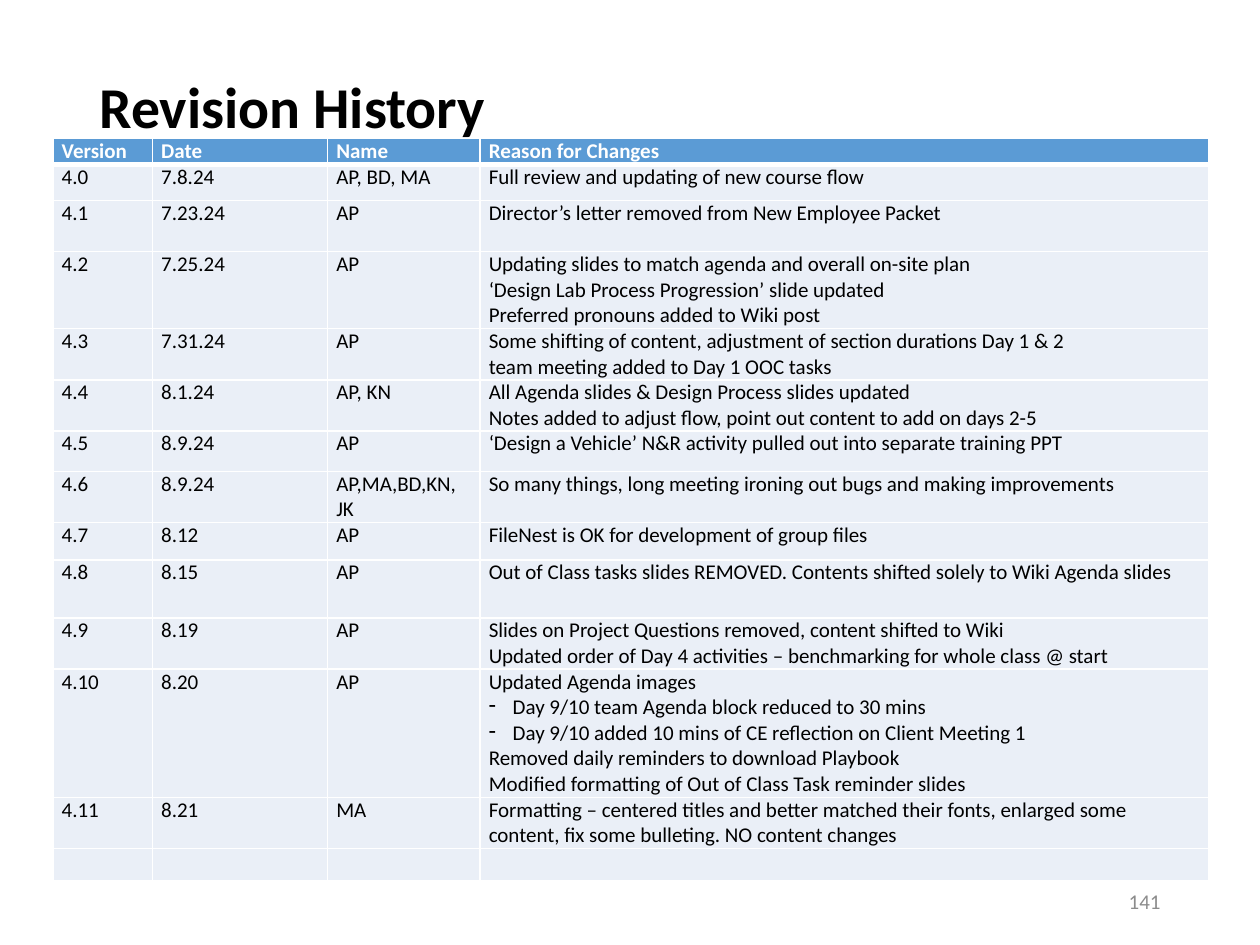
"""Build the revision history slide."""
from lxml.etree import SubElement
from pptx import Presentation
from pptx.dml.color import RGBColor
from pptx.enum.text import MSO_ANCHOR as Anchor, PP_ALIGN as Align
from pptx.oxml.ns import qn
from pptx.util import Inches, Pt

WHITE, BLACK, BLUE, PALE, GREY = "FFFFFF", "000000", "5B9BD5", "EAEFF7", "8C8C8C"
LINE = Pt(14.65)
COLS = [7.9, 13.9, 12.1, 57.8]
ROWS = [
    (1, "Version", "Date", "Name", "Reason for Changes"),
    (1.41, "4.0", "7.8.24", "AP, BD, MA", "Full review and updating of new course flow"),
    (2, "4.1", "7.23.24", "AP", "Director’s letter removed from New Employee Packet"),
    (3, "4.2", "7.25.24", "AP", "Updating slides to match agenda and overall on-site plan\n"
     "‘Design Lab Process Progression’ slide updated\nPreferred pronouns added to Wiki post"),
    (2, "4.3", "7.31.24", "AP", "Some shifting of content, adjustment of section durations Day 1 & 2\n"
     "team meeting added to Day 1 OOC tasks"),
    (2, "4.4", "8.1.24", "AP, KN", "All Agenda slides & Design Process slides updated\n"
     "Notes added to adjust flow, point out content to add on days 2-5"),
    (1.57, "4.5", "8.9.24", "AP", "‘Design a Vehicle’ N&R activity pulled out into separate training PPT"),
    (2, "4.6", "8.9.24", "AP,MA,BD,KN, JK",
     "So many things, long meeting ironing out bugs and making improvements"),
    (1.46, "4.7", "8.12", "AP", "FileNest is OK for development of group files"),
    (2.26, "4.8", "8.15", "AP",
     "Out of Class tasks slides REMOVED. Contents shifted solely to Wiki Agenda slides"),
    (2, "4.9", "8.19", "AP", "Slides on Project Questions removed, content shifted to Wiki\n"
     "Updated order of Day 4 activities – benchmarking for whole class @ start"),
    (5, "4.10", "8.20", "AP", "Updated Agenda images\n- Day 9/10 team Agenda block reduced to 30 mins\n"
     "- Day 9/10 added 10 mins of CE reflection on Client Meeting 1\n"
     "Removed daily reminders to download Playbook\n"
     "Modified formatting of Out of Class Task reminder slides"),
    (2, "4.11", "8.21", "MA", "Formatting – centered titles and better matched their fonts, "
     "enlarged some content, fix some bulleting. NO content changes"),
    (1.25, "", "", "", ""),
]

deck = Presentation()
deck.slide_width, deck.slide_height = Inches(10), Inches(7.5)
W, H = deck.slide_width / 100, deck.slide_height / 100
slide = deck.slides.add_slide(deck.slide_layouts[5])


def write(para, text, size, color, bold=False):
    """Add one formatted run to a paragraph."""
    run = para.add_run()
    run.text = text
    for key, value in {"name": "Calibri", "size": Pt(size), "bold": bold}.items():
        setattr(run.font, key, value)
    run.font.color.rgb = RGBColor.from_string(color)


def edge(cell, side, width):
    """Draw one white border of a cell."""
    line = SubElement(cell._tc.get_or_add_tcPr(), qn(f"a:ln{side}"), w=str(Pt(width)))
    SubElement(SubElement(line, qn("a:solidFill")), qn("a:srgbClr"), val=WHITE)


title = slide.shapes.title
spot = {"left": 6.9 * W, "top": 5.33 * H, "width": 86.2 * W, "height": 19.33 * H}
for key, value in spot.items():
    setattr(title, key, int(value))
frame = title.text_frame
frame.vertical_anchor, frame.margin_top = Anchor.TOP, int(3 * H)
head = frame.paragraphs[0]
head.alignment, head.line_spacing = Align.LEFT, 0.9
write(head, "Revision History", 33, BLACK, True)

tall = sum(row[0] for row in ROWS) * LINE
grid = slide.shapes.add_table(len(ROWS), len(COLS), int(4.2 * W), int(14.67 * H),
                              int(sum(COLS) * W), int(tall)).table
for col, share in zip(grid.columns, COLS):
    col.width = int(share * W)

for r, (lines, *texts) in enumerate(ROWS):
    grid.rows[r].height = int(lines * LINE)
    for c, text in enumerate(texts):
        cell = grid.cell(r, c)
        inset = {"margin_left": 0.07, "margin_right": 0.07, "margin_top": 0, "margin_bottom": 0}
        for key, value in inset.items():
            setattr(cell, key, Inches(value))
        for side in "LRTB":
            edge(cell, side, 3 if (r, side) in [(0, "B"), (1, "T")] else 1)
        cell.fill.solid()
        cell.fill.fore_color.rgb = RGBColor.from_string(PALE if r else BLUE)
        for i, part in enumerate(text.split("\n")):
            para = cell.text_frame.paragraphs[0] if i == 0 else cell.text_frame.add_paragraph()
            if part.startswith("- "):
                props = para._p.get_or_add_pPr()
                props.set("marL", str(Inches(0.19)))
                props.set("indent", str(-Inches(0.19)))
                SubElement(props, qn("a:buChar"), char="-")
            if part:
                write(para, part.removeprefix("- "), 12, BLACK if r else WHITE, r == 0)
            else:
                SubElement(para._p, qn("a:endParaRPr"), sz="1200")

page = slide.shapes.add_textbox(int(70.6 * W), int(92.67 * H), int(22.5 * W), int(5.33 * H))
frame = page.text_frame
frame.word_wrap, frame.vertical_anchor = True, Anchor.MIDDLE
frame.paragraphs[0].alignment = Align.RIGHT
write(frame.paragraphs[0], "141", 12, GREY)

deck.save("out.pptx")
